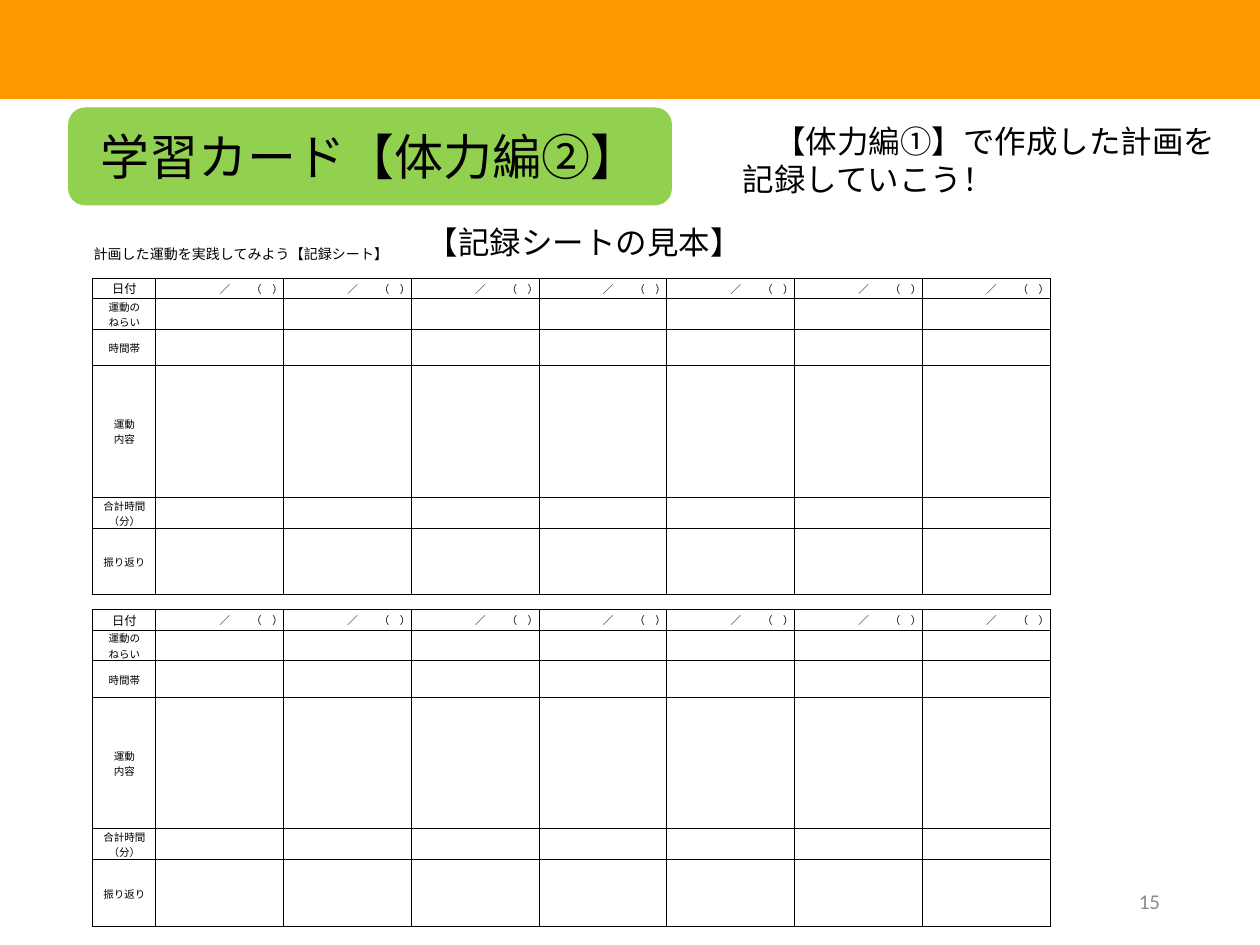
from dataclasses import dataclass

from lxml import etree
from pptx import Presentation
from pptx.dml.color import RGBColor
from pptx.enum.shapes import MSO_SHAPE
from pptx.enum.text import MSO_ANCHOR, PP_ALIGN
from pptx.oxml.ns import qn
from pptx.util import Pt

RECTANGLE, ROUNDED = MSO_SHAPE.RECTANGLE, MSO_SHAPE.ROUNDED_RECTANGLE
LEFT, CENTER, RIGHT = PP_ALIGN.LEFT, PP_ALIGN.CENTER, PP_ALIGN.RIGHT
TOP, MIDDLE = MSO_ANCHOR.TOP, MSO_ANCHOR.MIDDLE
PLAIN_TABLE = "{2D5ABB26-0587-4C30-8999-92F81FD0307C}"

DAYS = 7
DATE_FIELD = "／　　（　）"
SHEET_TITLE = "計画した運動を実践してみよう【記録シート】"
RECORD_ROWS = [
    ("日付", 11.5),
    ("運動の\nねらい", 17.7),
    ("時間帯", 20.8),
    ("運動\n内容", 75.1),
    ("合計時間（分）", 17.7),
    ("振り返り", 38.2),
]
SPACER = ("", 8.6)


@dataclass(frozen=True)
class Theme:
    bar: str = "FF9900"
    badge: str = "92D050"
    ink: str = "000000"
    muted: str = "8C8C8C"
    latin: str = "Calibri"
    japanese: str = "Noto Sans CJK JP"
    title: int = 28
    body: int = 18
    number: int = 12
    caption: int = 8
    date: int = 7
    label: int = 6
    empty: int = 5
    rule: float = 0.5


class Page:
    """Draws styled elements on one slide, measured in points."""

    def __init__(self, page, theme):
        self.page = page
        self.theme = theme

    def paragraph(self, para, text, size, font, color, align=LEFT):
        para.text = text
        para.alignment = align
        for span in para.runs:
            formats = {"size": Pt(size), "name": font}
            for name, value in formats.items():
                setattr(span.font, name, value)
            span.font.color.rgb = RGBColor.from_string(color)
            east_asian = etree.SubElement(span.font._element, qn("a:ea"))
            east_asian.set("typeface", self.theme.japanese)
        for line_break in para._p.findall(qn("a:br")):
            etree.SubElement(line_break, qn("a:rPr"), sz=str(size * 100))
        if not text:
            etree.SubElement(para._p, qn("a:endParaRPr"), sz=str(size * 100))

    def shape(self, kind, bounds, color, outlined=False):
        shape = self.page.shapes.add_shape(kind, *map(Pt, bounds))
        shape.shadow.inherit = False
        shape.fill.solid()
        shape.fill.fore_color.rgb = RGBColor.from_string(color)
        if outlined:
            shape.line.color.rgb = RGBColor.from_string(color)
            shape.line.width = Pt(1)
        else:
            shape.line.fill.background()
        return shape

    def badge(self, text, bounds):
        theme = self.theme
        badge = self.shape(ROUNDED, bounds, theme.badge, outlined=True)
        badge.text_frame.vertical_anchor = MIDDLE
        self.paragraph(badge.text_frame.paragraphs[0], text, theme.title, theme.latin, theme.ink, CENTER)

    def text(self, text, bounds, size, color, align=LEFT, anchor=TOP):
        box = self.page.shapes.add_textbox(*map(Pt, bounds))
        formats = {"word_wrap": True, "vertical_anchor": anchor}
        for name, value in formats.items():
            setattr(box.text_frame, name, value)
        self.paragraph(box.text_frame.paragraphs[0], text, size, self.theme.latin, color, align)

    def border(self, cell):
        properties = cell._tc.get_or_add_tcPr()
        for index, side in enumerate(("a:lnL", "a:lnR", "a:lnT", "a:lnB")):
            line = etree.Element(qn(side), w=str(Pt(self.theme.rule)))
            fill = etree.SubElement(line, qn("a:solidFill"))
            etree.SubElement(fill, qn("a:srgbClr"), val=self.theme.ink)
            properties.insert(index, line)

    def cell(self, cell, text, size, align):
        formats = {
            "margin_left": Pt(0.5),
            "margin_right": Pt(0.5),
            "margin_top": Pt(0.5),
            "margin_bottom": 0,
            "vertical_anchor": MIDDLE,
        }
        for name, value in formats.items():
            setattr(cell, name, value)
        cell.fill.background()
        theme = self.theme
        self.paragraph(cell.text_frame.paragraphs[0], text, size, theme.japanese, theme.ink, align)

    def record_table(self, left, top, label_width, day_width):
        theme = self.theme
        rows = [(SHEET_TITLE, 12.2), SPACER, *RECORD_ROWS, SPACER, *RECORD_ROWS]
        width = label_width + DAYS * day_width
        height = sum(row_height for _, row_height in rows)
        frame = self.page.shapes.add_table(len(rows), DAYS + 1, *map(Pt, (left, top, width, height)))
        table = frame.table
        table.first_row = table.horz_banding = False
        table._tbl.tblPr.find(qn("a:tableStyleId")).text = PLAIN_TABLE
        for index, column in enumerate(table.columns):
            column.width = Pt(day_width if index else label_width)
        for row, (label, row_height) in zip(table.rows, rows):
            row.height = Pt(row_height)
            dated = label == "日付"
            for index, cell in enumerate(row.cells):
                if index:
                    text = DATE_FIELD if dated else ""
                    size, align = (theme.label, RIGHT) if dated else (theme.empty, LEFT)
                elif label == SHEET_TITLE:
                    text, size, align = label, theme.caption, LEFT
                else:
                    text, align = label, CENTER
                    size = theme.date if dated else theme.label if label else theme.empty
                self.cell(cell, text, size, align)
                if label not in (SHEET_TITLE, ""):
                    self.border(cell)
        table.cell(0, 0).merge(table.cell(0, 3))


def main():
    theme = Theme()
    deck = Presentation()
    deck.slide_width, deck.slide_height = Pt(720), Pt(540)
    page = Page(deck.slides.add_slide(deck.slide_layouts[6]), theme)
    page.shape(RECTANGLE, (-1.4, 0, 721.4, 56.7), theme.bar)
    page.text("15", (508, 500.4, 162, 28.8), theme.number, theme.muted, RIGHT, MIDDLE)
    page.badge("学習カード【体力編②】", (39.5, 61.9, 344, 54.9))
    page.text("　【体力編①】で作成した計画を記録していこう！", (417.3, 66.2, 287.3, 51), theme.body, theme.ink)
    page.record_table(53, 138.2, 36, 73)
    page.text("【記録シートの見本】", (236.9, 123.8, 203.8, 28.8), theme.body, theme.ink)
    deck.save("out.pptx")


if __name__ == "__main__":
    main()
